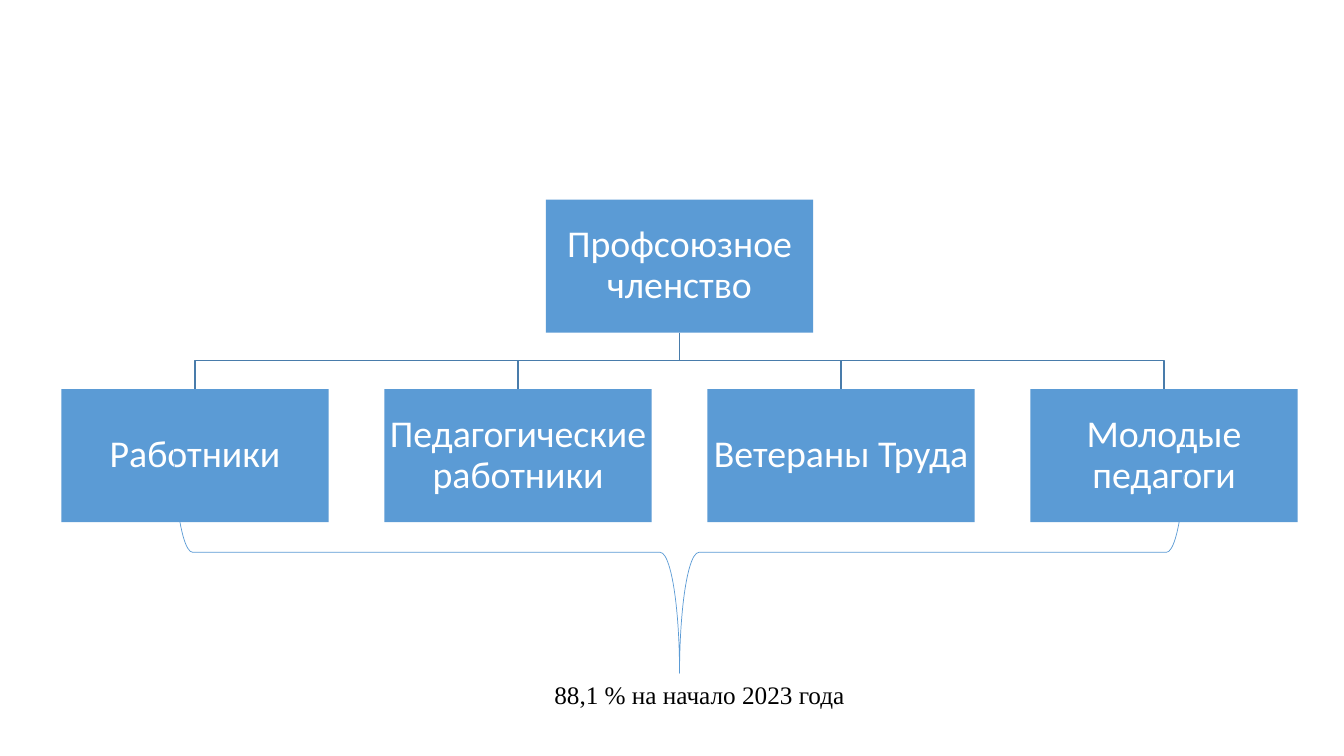
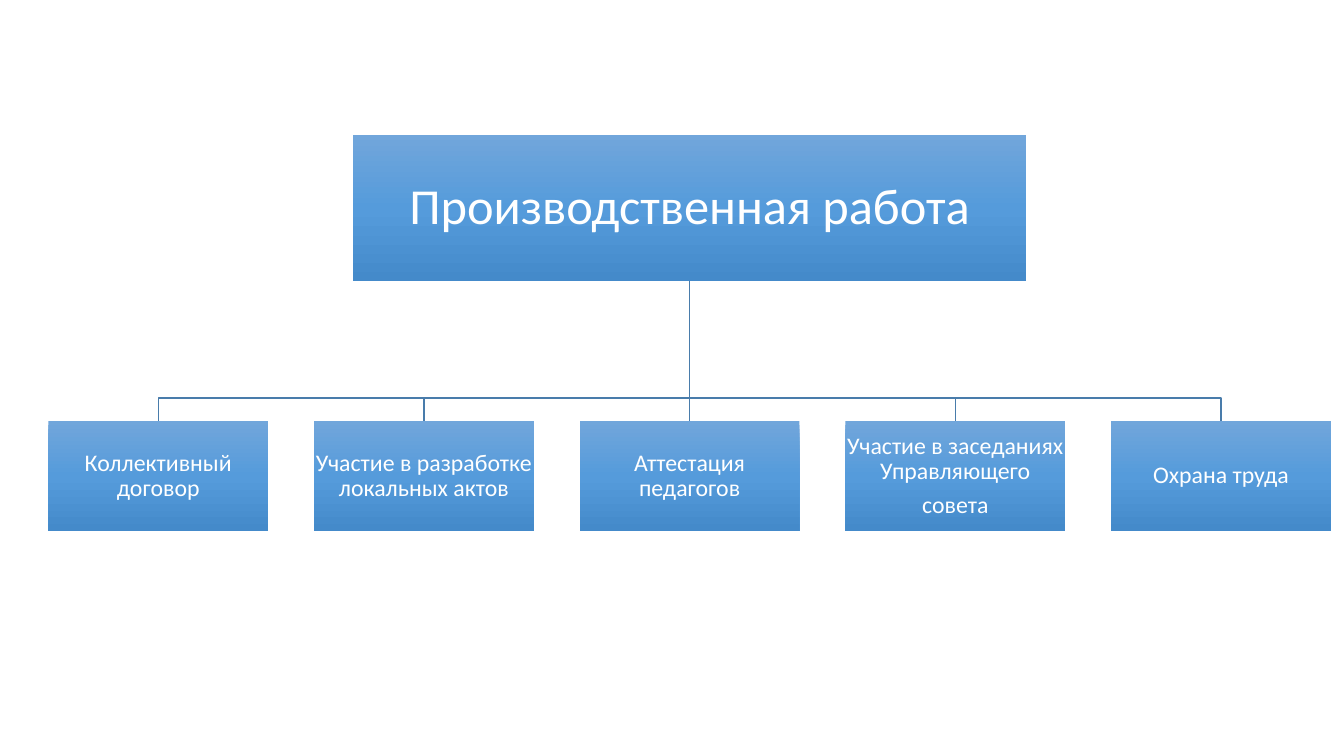
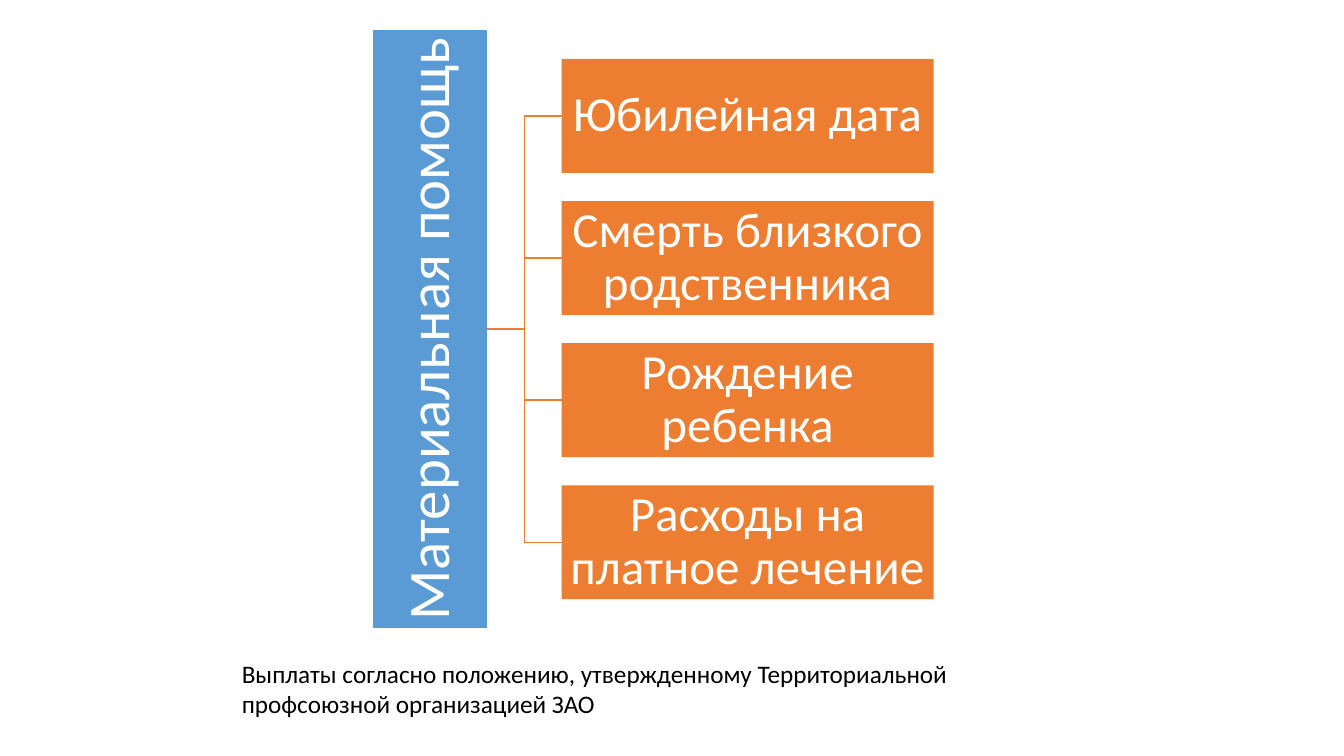
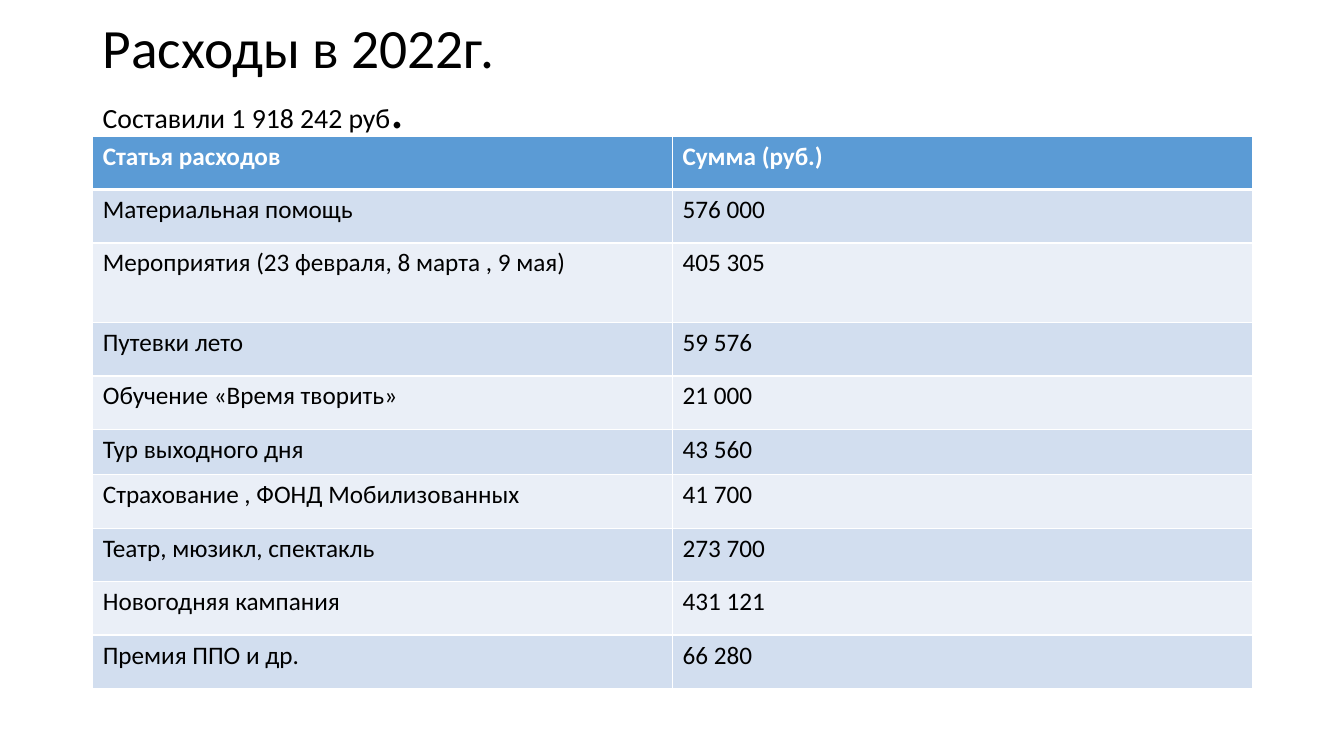
from copy import deepcopy
from dataclasses import dataclass

from lxml import etree
from pptx import Presentation
from pptx.dml.color import RGBColor
from pptx.enum.shapes import MSO_SHAPE
from pptx.enum.text import MSO_ANCHOR, PP_ALIGN
from pptx.oxml.ns import qn
from pptx.util import Inches, Pt

RECTANGLE, BRACE = MSO_SHAPE.RECTANGLE, MSO_SHAPE.RIGHT_BRACE
MIDDLE = MSO_ANCHOR.MIDDLE
CENTER, JUSTIFY, LEFT = PP_ALIGN.CENTER, PP_ALIGN.JUSTIFY, PP_ALIGN.LEFT


@dataclass(frozen=True)
class Theme:
    font: str = "Calibri"
    serif: str = "Times New Roman"
    blue: str = "5B9BD5"
    orange: str = "ED7D31"
    branch: str = "497CAB"
    white: str = "FFFFFF"
    black: str = "000000"
    gradient: tuple = ("71A6DB", "559BDB", "448ACA")
    bands: tuple = ("D2DEEF", "EAEFF7")
    title: float = 39.6
    subtitle: float = 19.8
    body: float = 18
    root_upright: float = 42
    root_wide: float = 36
    branch_large: float = 35
    branch_medium: float = 27
    branch_small: float = 17
    line_spacing: float = 0.9


THEME = Theme()


@dataclass(frozen=True)
class Box:
    """A rectangle on the slide, in inches."""
    left: float
    top: float
    width: float
    height: float

    @property
    def emu(self):
        return [Inches(n) for n in (self.left, self.top, self.width, self.height)]

    @property
    def center_x(self):
        return self.left + self.width / 2

    @property
    def center_y(self):
        return self.top + self.height / 2


def rgb(color):
    return RGBColor.from_string(color)


def style_run(run, size, color, font=THEME.font, bold=False):
    run.font.size = Pt(size)
    run.font.name = font
    run.font.bold = bold
    run.font.color.rgb = rgb(color)


def fill_gradient(shape, colors):
    """Fill with three evenly spaced colours, from top to bottom."""
    shape.fill.gradient()
    shape.fill.gradient_angle = 270
    stop_list = shape._element.find(".//" + qn("a:gsLst"))
    stop_list.append(deepcopy(stop_list[0]))
    for index, (stop, color) in enumerate(zip(shape.fill.gradient_stops, colors)):
        stop.position = index / 2
        stop.color.rgb = rgb(color)


def add_block(slide, box, text, size, fill, inset=0.02):
    """A filled rectangle with centred white text; a tuple fill is a gradient."""
    block = slide.shapes.add_shape(RECTANGLE, *box.emu)
    block.shadow.inherit = False
    block.line.fill.background()
    if isinstance(fill, tuple):
        fill_gradient(block, fill)
    else:
        block.fill.solid()
        block.fill.fore_color.rgb = rgb(fill)
    frame = block.text_frame
    frame.word_wrap = True
    frame.vertical_anchor = MIDDLE
    frame.margin_left = frame.margin_right = Inches(inset)
    frame.margin_top = frame.margin_bottom = Inches(inset)
    frame.text = text
    for paragraph in frame.paragraphs:
        paragraph.alignment = CENTER
        paragraph.line_spacing = THEME.line_spacing
        paragraph.space_after = Pt(0.35 * size)
        for run in paragraph.runs:
            style_run(run, size, THEME.white)
    return block


def add_branch(slide, points, color):
    """An open bent line through the points, given in inches."""
    start, *bends = [(Inches(x), Inches(y)) for x, y in points]
    builder = slide.shapes.build_freeform(*start)
    builder.add_line_segments(bends, close=False)
    branch = builder.convert_to_shape()
    branch.shadow.inherit = False
    branch.fill.background()
    branch.line.color.rgb = rgb(color)
    branch.line.width = Pt(1)


def add_tree_down(slide, region, root, children, root_size, child_size, drop, fill):
    """Root centred at the top of the region, children in a row at its bottom.

    root and children are (text, font size, inset) and (texts, font size, inset);
    the sizes are (width, height).
    """
    root_width, root_height = root_size
    width, height = child_size
    root_box = Box(region.center_x - root_width / 2, region.top,
                   root_width, root_height)
    texts, size, inset = children
    pitch = (region.width - width) / (len(texts) - 1)
    top = region.top + region.height - height
    boxes = [Box(region.left + i * pitch, top, width, height)
             for i in range(len(texts))]
    for box in boxes:
        add_branch(slide, [(root_box.center_x, root_box.top + root_height),
                           (root_box.center_x, top - drop),
                           (box.center_x, top - drop),
                           (box.center_x, top)], THEME.branch)
    add_block(slide, root_box, root[0], root[1], fill, root[2])
    for box, text in zip(boxes, texts):
        add_block(slide, box, text, size, fill, inset)


def add_tree_right(slide, region, root, children):
    """Upright root at the left, children stacked at the right."""
    thickness, child_width, gap = 1.13, 3.69, 0.28
    root_box = Box(region.left, region.top, thickness, region.height)
    pitch = thickness + gap
    stack_height = len(children) * pitch - gap
    top = region.center_y - stack_height / 2
    left = region.left + region.width - child_width
    root_right = region.left + thickness
    bend = (root_right + left) / 2
    boxes = [Box(left, top + i * pitch, child_width, thickness)
             for i in range(len(children))]
    for box in boxes:
        add_branch(slide, [(root_right, root_box.center_y),
                           (bend, root_box.center_y),
                           (bend, box.center_y),
                           (left, box.center_y)], THEME.orange)
    root_block = add_block(slide, root_box, root, THEME.root_upright,
                           THEME.blue, 0.03)
    root_block.text_frame._txBody.bodyPr.set("vert", "vert270")
    for box, text in zip(boxes, children):
        add_block(slide, box, text, THEME.branch_large, THEME.orange)


def add_brace_below(slide, region):
    """A brace that spans the region's width and points down."""
    upright = Box(region.center_x - region.height / 2,
                  region.center_y - region.width / 2,
                  region.height, region.width)
    brace = slide.shapes.add_shape(BRACE, *upright.emu)
    brace.shadow.inherit = False
    brace.rotation = 90
    brace.adjustments[0] = 0.08
    brace.adjustments[1] = 0.5
    brace.fill.background()
    brace.line.color.rgb = rgb(THEME.blue)
    brace.line.width = Pt(0.5)


def add_note(slide, box, text, font=THEME.font, align=LEFT, spacing=0):
    frame = slide.shapes.add_textbox(*box.emu).text_frame
    frame.word_wrap = True
    frame.text = text
    paragraph = frame.paragraphs[0]
    paragraph.alignment = align
    paragraph.space_before = paragraph.space_after = Pt(spacing)
    style_run(paragraph.runs[0], THEME.body, THEME.black, font)


def add_title(slide, box, lines):
    """Each line is a list of (text, font size) runs."""
    frame = slide.shapes.add_textbox(*box.emu).text_frame
    frame.word_wrap = True
    for index, line in enumerate(lines):
        paragraph = frame.add_paragraph() if index else frame.paragraphs[0]
        paragraph.line_spacing = THEME.line_spacing
        for text, size in line:
            run = paragraph.add_run()
            run.text = text
            style_run(run, size, THEME.black)


def add_cell_borders(cell, widths):
    properties = cell._tc.get_or_add_tcPr()
    for side, width in widths.items():
        border = etree.SubElement(properties, qn("a:ln" + side), w=str(Pt(width)))
        fill = etree.SubElement(border, qn("a:solidFill"))
        etree.SubElement(fill, qn("a:srgbClr"), val=THEME.white)


def add_expense_table(slide, box, rows, row_heights):
    """Equal columns, a blue header row and alternating bands."""
    table = slide.shapes.add_table(len(rows), len(rows[0]), *box.emu).table
    table.horz_banding = False
    for column in table.columns:
        column.width = Inches(box.width / len(rows[0]))
    for r, (values, height) in enumerate(zip(rows, row_heights)):
        table.rows[r].height = Inches(height)
        header = r == 0
        widths = {"L": 1, "R": 1, "T": 3 if r == 1 else 1, "B": 3 if header else 1}
        for c, value in enumerate(values):
            cell = table.cell(r, c)
            add_cell_borders(cell, widths)
            cell.fill.solid()
            cell.fill.fore_color.rgb = rgb(
                THEME.blue if header else THEME.bands[(r - 1) % 2])
            cell.text_frame.text = value
            style_run(cell.text_frame.paragraphs[0].runs[0], THEME.body,
                      THEME.white if header else THEME.black, bold=header)


def build_membership(slide):
    add_tree_down(
        slide, Box(0.61, 1.98, 12.26, 3.2),
        ("Профсоюзное членство", THEME.branch_medium, 0.02),
        (["Работники", "Педагогические работники", "Ветераны Труда",
          "Молодые педагоги"], THEME.branch_medium, 0.02),
        root_size=(2.65, 1.32), child_size=(2.65, 1.32), drop=0.28, fill=THEME.blue)
    add_brace_below(slide, Box(1.72, 4.28, 10.04, 2.4))
    add_note(slide, Box(5.4, 6.69, 6.67, 0.4), "88,1 % на начало 2023 года",
             THEME.serif, JUSTIFY, 5)


def build_work(slide):
    add_tree_down(
        slide, Box(0.48, 1.34, 12.72, 3.93),
        ("Производственная работа", THEME.root_wide, 0.03),
        (["Коллективный договор", "Участие в разработке локальных актов",
          "Аттестация\vпедагогов", "Участие в заседаниях Управляющего\nсовета",
          "Охрана труда"], THEME.branch_small, 0.01),
        root_size=(6.68, 1.45), child_size=(2.18, 1.09), drop=0.23,
        fill=THEME.gradient)


def build_aid(slide):
    add_tree_right(
        slide, Box(3.7, 0.3, 5.56, 5.93), "Материальная помощь",
        ["Юбилейная дата", "Смерть близкого родственника", "Рождение ребенка",
         "Расходы на платное лечение"])
    add_note(slide, Box(2.3, 6.48, 8.5, 0.71),
             "Выплаты согласно положению, утвержденному Территориальной "
             "профсоюзной организацией ЗАО")


def build_expenses(slide):
    add_title(slide, Box(0.92, 0.16, 11.5, 1.2), [
        [("Расходы в 2022г.", THEME.title)],
        [("Составили 1 918 242 руб", THEME.subtitle), (".", THEME.title)],
    ])
    rows = [
        ("Статья расходов", "Сумма (руб.)"),
        ("Материальная помощь", "576 000"),
        ("Мероприятия (23 февраля, 8 марта , 9 мая)", "405 305"),
        ("Путевки лето", "59 576"),
        ("Обучение «Время творить»", "21 000"),
        ("Тур выходного дня", "43 560"),
        ("Страхование , ФОНД Мобилизованных", "41 700"),
        ("Театр, мюзикл, спектакль", "273 700"),
        ("Новогодняя кампания", "431 121"),
        ("Премия ППО и др.", "66 280"),
    ]
    row_heights = [0.53] * len(rows)
    row_heights[2], row_heights[5] = 0.79, 0.45
    add_expense_table(slide, Box(0.92, 1.35, 11.5, sum(row_heights)),
                      rows, row_heights)


def main():
    presentation = Presentation()
    presentation.slide_width = Inches(13.33)
    presentation.slide_height = Inches(7.5)
    blank = presentation.slide_layouts[6]
    for build in (build_membership, build_work, build_aid, build_expenses):
        build(presentation.slides.add_slide(blank))
    presentation.save("out.pptx")


if __name__ == "__main__":
    main()
